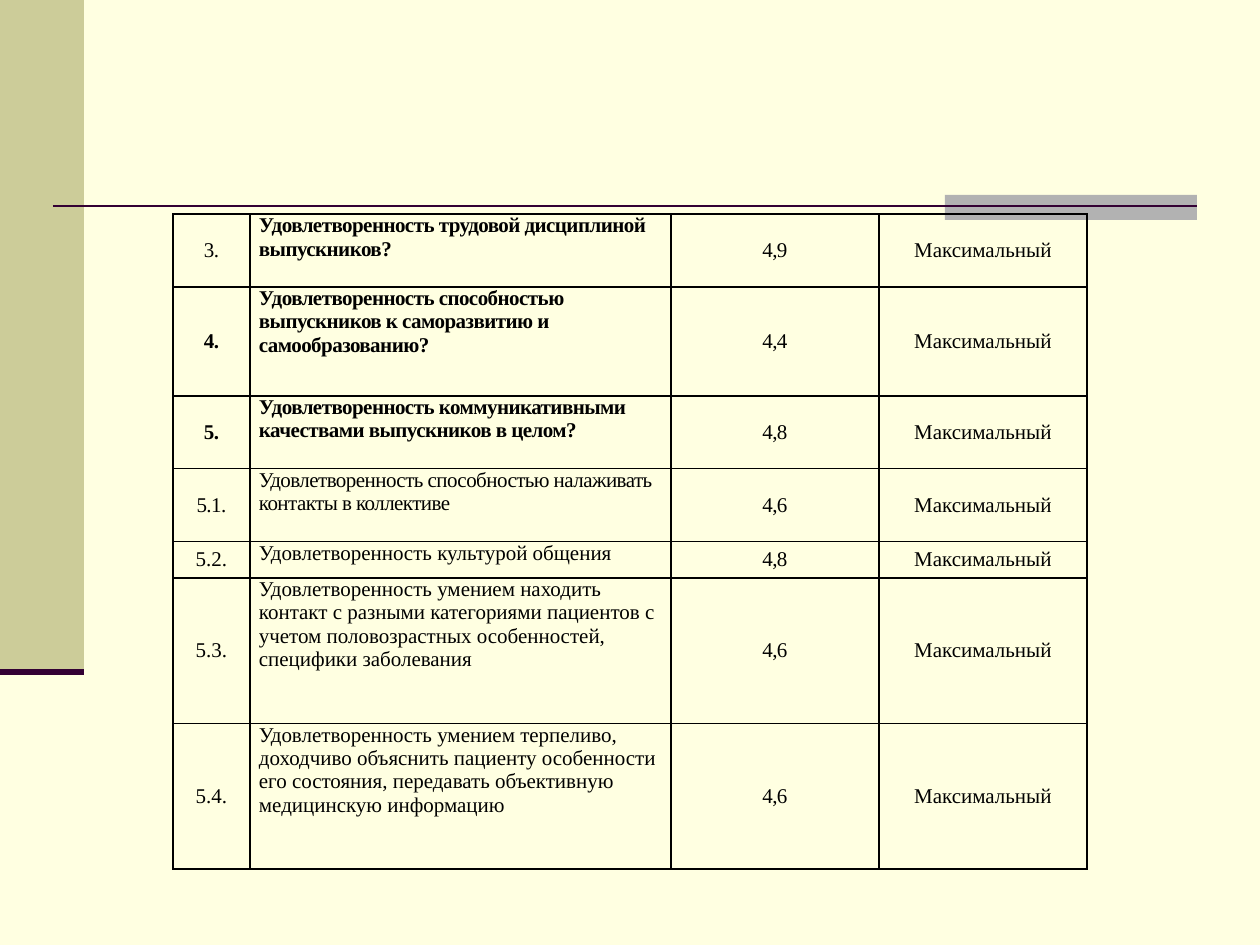
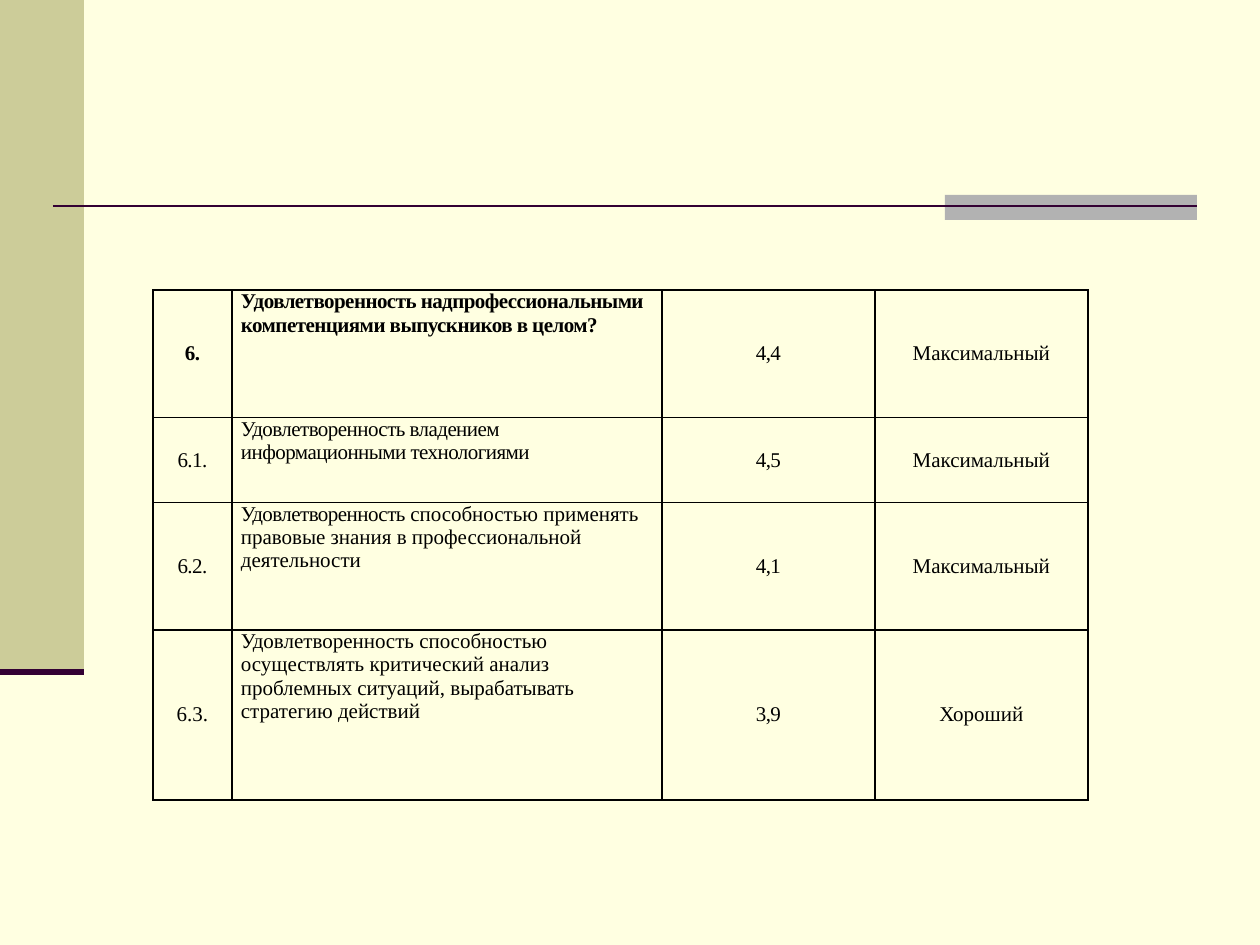
from dataclasses import dataclass
from lxml.etree import SubElement as Sub
from pptx import Presentation as Deck
from pptx.dml.color import RGBColor as Rgb
from pptx.enum.shapes import MSO_CONNECTOR as Link, MSO_SHAPE as Form
from pptx.enum.text import MSO_ANCHOR as Anchor, PP_ALIGN as Align
from pptx.oxml.ns import qn
from pptx.slide import Slide
from pptx.table import _Cell as Cell
from pptx.util import Emu, Pt

SCALE = 914400 / 126  # EMU in one px
FONT = "Times New Roman"
TIGHT = -30  # letter spacing, hundredths of a point
HUES = {"page": "FFFFE1", "band": "CCCC99", "tab": "B2B2B2",
        "rule": "330033", "ink": "000000"}


@dataclass(frozen=True)
class Box:
    x: int
    y: int
    w: int
    h: int
    hue: str


@dataclass(frozen=True)
class Rule:
    x: int
    end: int
    y: int
    width: float


@dataclass(frozen=True)
class Part:
    text: str
    bold: bool = False
    tight: bool = False


@dataclass(frozen=True)
class Row:
    lines: int  # share of the table height
    num: Part
    asks: tuple[Part, ...]
    score: str
    level: str = "Максимальный"


@dataclass(frozen=True)
class Grid:
    x: int
    y: int
    h: int
    cols: tuple[int, ...]
    rows: tuple[Row, ...]


# Shared decoration
BOXES = (Box(0, 0, 84, 672, "band"), Box(945, 195, 252, 25, "tab"))
RULES = (Rule(53, 1197, 206, 1.5), Rule(0, 84, 672, 3.5))

# Survey results, one grid per slide
GRIDS = (
    Grid(173, 214, 655, (77, 421, 208, 208), (
        Row(2, Part("3.", tight=True),
            (Part("Удовлетворенность трудовой дисциплиной выпускников?", True, True),), "4,9"),
        Row(3, Part("4.", True, True),
            (Part("Удовлетворенность способностью выпускников к саморазвитию и "
                  "самообразованию?", True, True),), "4,4"),
        Row(2, Part("5.", True, True),
            (Part("Удовлетворенность коммуникативными качествами выпускников "
                  "в целом?", True, True),), "4,8"),
        Row(2, Part("5.1.", tight=True),
            (Part("Удовлетворенность способностью налаживать контакты в коллективе",
                  tight=True),), "4,6"),
        Row(1, Part("5.2."), (Part("Удовлетворенность культурой общения"),), "4,8"),
        Row(4, Part("5.3."),
            (Part("Удовлетворенность умением находить контакт с разными категориями "
                  "пациентов с учетом половозрастных особенностей, специфики "
                  "заболевания"),), "4,6"),
        Row(4, Part("5.4."),
            (Part("Удовлетворенность умением терпеливо, доходчиво объяснить пациенту "
                  "особенности его состояния, передавать объективную медицинскую "
                  "информацию"),), "4,6"),
    )),
    Grid(153, 290, 510, (79, 430, 213, 213), (
        Row(3, Part("6.", True, True),
            (Part("Удовлетворенность надпрофессиональными компетенциями выпускников "
                  "в целом?", True, True),), "4,4"),
        Row(2, Part("6.1.", tight=True),
            (Part("Удовлетворенность владением информационными технологиями",
                  tight=True),), "4,5"),
        Row(3, Part("6.2.", tight=True),
            (Part("Удовлетворенность ", tight=True),
             Part("способностью применять правовые знания в профессиональной "
                  "деятельности")), "4,1"),
        Row(4, Part("6.3."),
            (Part("Удовлетворенность способностью осуществлять критический анализ "
                  "проблемных ситуаций, вырабатывать стратегию действий"),),
            "3,9", "Хороший"),
    )),
)


def px(size: float) -> Emu:
    return Emu(round(size * SCALE))


def tint(name: str) -> Rgb:
    return Rgb.from_string(HUES[name])


def add_box(slide: Slide, box: Box) -> None:
    shape = slide.shapes.add_shape(Form.RECTANGLE, px(box.x), px(box.y), px(box.w), px(box.h))
    shape.shadow.inherit = False
    shape.fill.solid()
    shape.fill.fore_color.rgb = tint(box.hue)
    shape.line.fill.background()


def add_rule(slide: Slide, rule: Rule) -> None:
    link = slide.shapes.add_connector(
        Link.STRAIGHT, px(rule.x), px(rule.y), px(rule.end), px(rule.y))
    link.line.color.rgb = tint("rule")
    link.line.width = Pt(rule.width)
    Sub(link._element.spPr, qn("a:effectLst"))


def frame(cell: Cell) -> None:
    props = cell._tc.get_or_add_tcPr()
    for side in ("lnL", "lnR", "lnT", "lnB"):
        line = Sub(props, qn(f"a:{side}"), w=str(Pt(1)))
        Sub(Sub(line, qn("a:solidFill")), qn("a:srgbClr"), val=HUES["ink"])
    cell.fill.background()


def fill_cell(cell: Cell, parts: tuple[Part, ...], mid: bool) -> None:
    frame(cell)
    cell.margin_left = cell.margin_right = px(9)
    cell.margin_top = cell.margin_bottom = 0
    cell.vertical_anchor = Anchor.MIDDLE if mid else Anchor.TOP
    para = cell.text_frame.paragraphs[0]
    para.alignment = Align.CENTER if mid else Align.LEFT
    para.space_before = Pt(3)
    for part in parts:
        run = para.add_run()
        run.text = part.text
        font = run.font
        font.name, font.size, font.bold = FONT, Pt(12), part.bold
        font.color.rgb = tint("ink")
        if part.tight:
            run._r.get_or_add_rPr().set("spc", str(TIGHT))


def add_grid(slide: Slide, grid: Grid) -> None:
    table = slide.shapes.add_table(
        len(grid.rows), len(grid.cols), px(grid.x), px(grid.y),
        px(sum(grid.cols)), px(grid.h)).table
    table.first_row = table.horz_banding = False
    for col, width in zip(table.columns, grid.cols):
        col.width = px(width)
    unit = grid.h / sum(row.lines for row in grid.rows)
    for i, row in enumerate(grid.rows):
        table.rows[i].height = px(unit * row.lines)
        cells = ((row.num,), row.asks, (Part(row.score, tight=True),), (Part(row.level),))
        for j, parts in enumerate(cells):
            fill_cell(table.cell(i, j), parts, mid=j != 1)


def add_page(deck: Deck, grid: Grid) -> None:
    slide = deck.slides.add_slide(deck.slide_layouts[6])
    slide.background.fill.solid()
    slide.background.fill.fore_color.rgb = tint("page")
    for box in BOXES:
        add_box(slide, box)
    for rule in RULES:
        add_rule(slide, rule)
    add_grid(slide, grid)


def main() -> None:
    deck = Deck()
    deck.slide_width, deck.slide_height = px(1260), px(945)
    for grid in GRIDS:
        add_page(deck, grid)
    deck.save("out.pptx")


if __name__ == "__main__":
    main()
